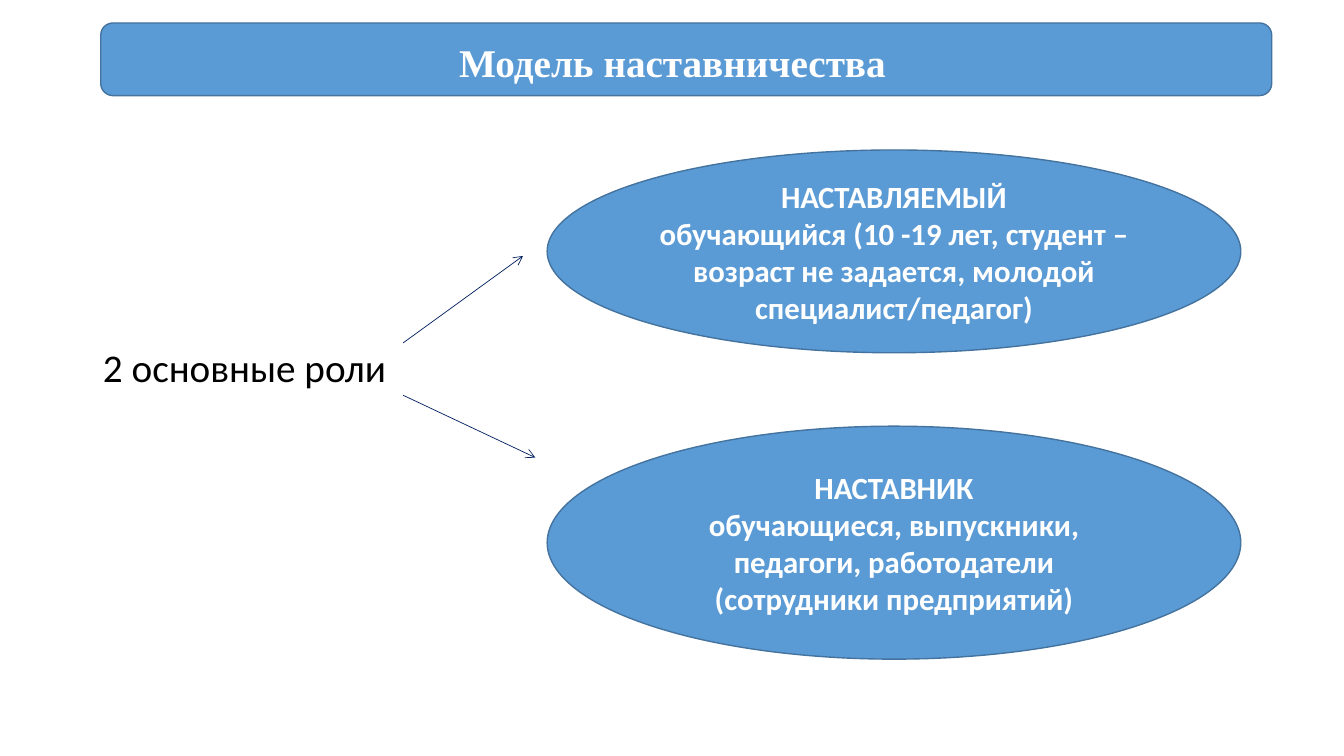
from dataclasses import dataclass

from lxml.etree import SubElement
from pptx import Presentation
from pptx.dml.color import RGBColor
from pptx.enum.shapes import MSO_CONNECTOR, MSO_SHAPE
from pptx.enum.text import MSO_ANCHOR, MSO_AUTO_SIZE, PP_ALIGN
from pptx.oxml.ns import qn
from pptx.shapes.autoshape import Shape
from pptx.slide import Slide
from pptx.text.text import _Paragraph as Paragraph
from pptx.util import Cm, Pt

COLORS = {
    "fill": "5B9BD5",
    "outline": "43739E",
    "arrow": "002060",
    "light": "FFFFFF",
    "dark": "000000",
}


@dataclass(frozen=True)
class Box:
    """Position and size in centimetres."""
    left: float
    top: float
    width: float
    height: float

    def lengths(self) -> tuple[Cm, Cm, Cm, Cm]:
        return Cm(self.left), Cm(self.top), Cm(self.width), Cm(self.height)


@dataclass(frozen=True)
class Role:
    name: str
    people: str
    box: Box
    arrow_start: tuple[float, float]
    arrow_end: tuple[float, float]


ROLES = [
    Role("НАСТАВЛЯЕМЫЙ",
         "обучающийся (10 -19 лет, студент – возраст не задается, "
         "молодой специалист/педагог)",
         Box(13.79, 3.78, 17.48, 5.11), (10.16, 8.64), (13.18, 6.45)),
    Role("НАСТАВНИК",
         "обучающиеся, выпускники, педагоги, работодатели "
         "(сотрудники предприятий)",
         Box(13.79, 10.74, 17.48, 5.87), (10.16, 9.96), (13.49, 11.53)),
]


def rgb(color: str) -> RGBColor:
    return RGBColor.from_string(COLORS[color])


def set_font(paragraph: Paragraph, name: str, size: int, color: str, bold: bool) -> None:
    font = paragraph.font
    font.name, font.size, font.bold = name, Pt(size), bold
    font.color.rgb = rgb(color)


def fill_placeholder(placeholder: Shape, box: Box, text: str) -> Paragraph:
    """Move a placeholder, write its only paragraph and return it."""
    placeholder.left, placeholder.top, placeholder.width, placeholder.height = box.lengths()
    frame = placeholder.text_frame
    frame.text = text
    frame.word_wrap = True
    frame.auto_size = MSO_AUTO_SIZE.NONE
    frame.vertical_anchor = MSO_ANCHOR.MIDDLE
    paragraph = frame.paragraphs[0]
    paragraph.line_spacing = 0.9
    paragraph.space_before = Pt(0)
    return paragraph


def add_blue_shape(slide: Slide, kind: MSO_SHAPE, box: Box) -> Shape:
    shape = slide.shapes.add_shape(kind, *box.lengths())
    shape.shadow.inherit = False
    shape.fill.solid()
    shape.fill.fore_color.rgb = rgb("fill")
    shape.line.color.rgb = rgb("outline")
    shape.line.width = Pt(1)
    return shape


def add_arrow(slide: Slide, start: tuple[float, float], end: tuple[float, float]) -> None:
    arrow = slide.shapes.add_connector(
        MSO_CONNECTOR.STRAIGHT, *(Cm(value) for value in start + end))
    arrow.line.color.rgb = rgb("arrow")
    arrow.line.width = Pt(0.5)
    SubElement(arrow.line._get_or_add_ln(), qn("a:tailEnd"), type="arrow")
    SubElement(arrow._element.spPr, qn("a:effectLst"))


def add_role(slide: Slide, role: Role) -> None:
    add_arrow(slide, role.arrow_start, role.arrow_end)
    ellipse = add_blue_shape(slide, MSO_SHAPE.OVAL, role.box)
    frame = ellipse.text_frame
    frame.text = f"{role.name}\n{role.people}"
    frame.word_wrap = True
    frame.vertical_anchor = MSO_ANCHOR.MIDDLE
    for paragraph in frame.paragraphs:
        paragraph.alignment = PP_ALIGN.CENTER
        set_font(paragraph, "Calibri", 22, "light", True)


def main() -> None:
    presentation = Presentation()
    presentation.slide_width, presentation.slide_height = Cm(33.87), Cm(19.05)
    slide = presentation.slides.add_slide(presentation.slide_layouts[1])

    title = slide.shapes.title
    heading = fill_placeholder(title, Box(2.34, 1.02, 29.21, 1.24), "Модель наставничества")
    heading.alignment = PP_ALIGN.CENTER
    set_font(heading, "Times New Roman", 28, "light", True)
    title_bar = add_blue_shape(slide, MSO_SHAPE.ROUNDED_RECTANGLE, Box(2.54, 0.58, 29.51, 1.83))
    title._element.addprevious(title_bar._element)

    role_count = fill_placeholder(
        slide.placeholders[1], Box(2.34, 8.53, 8.4, 1.6), "2 основные роли")
    set_font(role_count, "Calibri", 28, "dark", False)
    properties = role_count._p.get_or_add_pPr()
    properties.set("marL", "0")
    properties.set("indent", "0")
    bullet_none = properties.makeelement(qn("a:buNone"))
    properties.find(qn("a:defRPr")).addprevious(bullet_none)

    for role in ROLES:
        add_role(slide, role)

    presentation.save("out.pptx")


if __name__ == "__main__":
    main()
